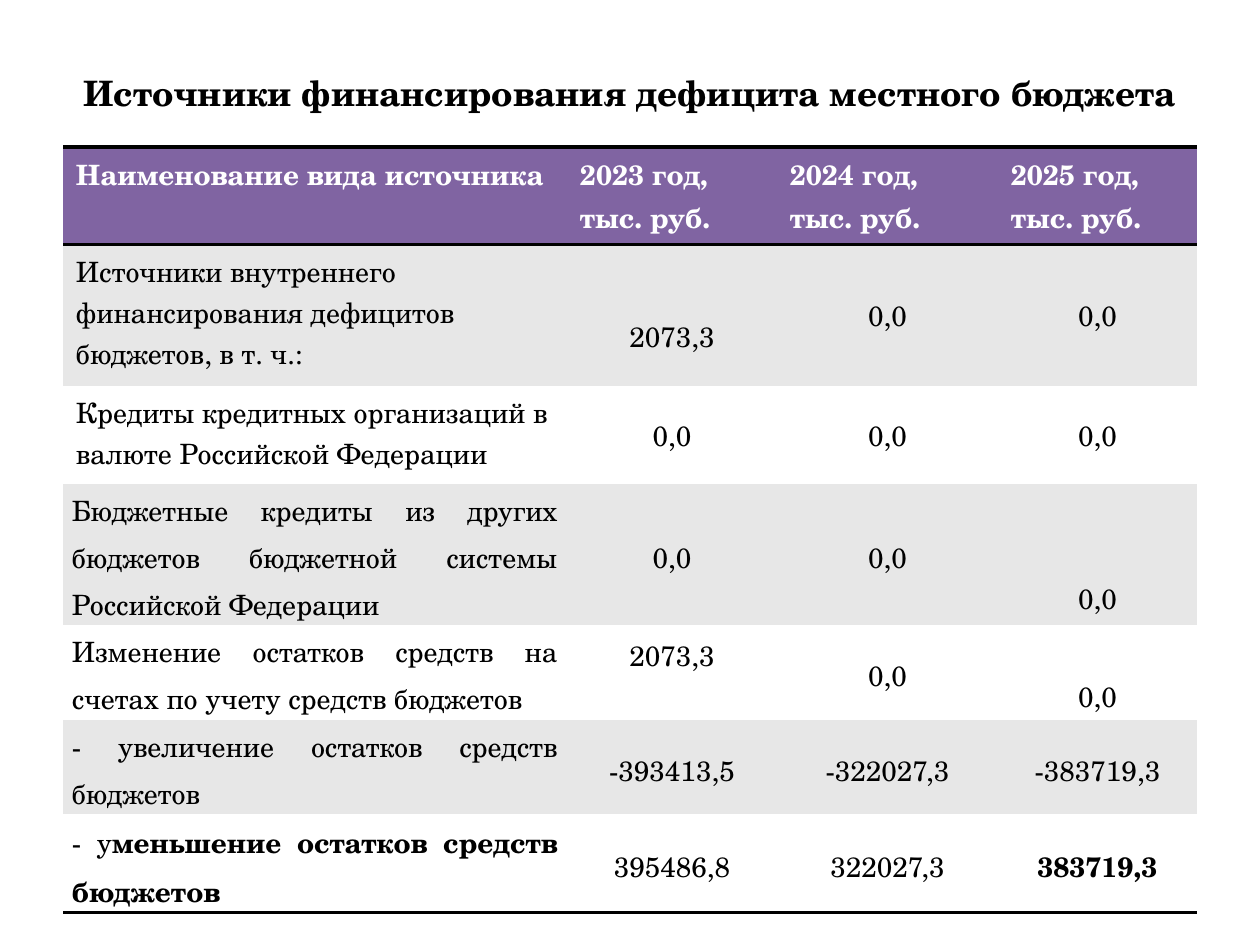
import pptx
import pptx.util
import pptx.dml.color
import pptx.enum.text
import pptx.oxml
import pptx.oxml.ns

RGB = pptx.dml.color.RGBColor
ALIGN = pptx.enum.text.PP_ALIGN
ANCHOR = pptx.enum.text.MSO_ANCHOR

BLACK = RGB(0x00, 0x00, 0x00)
WHITE = RGB(0xFF, 0xFF, 0xFF)
PURPLE = RGB(0x80, 0x64, 0xA2)
GREY = RGB(0xE7, 0xE7, 0xE7)
FONT = "TeX Gyre Schola"
EMU_PER_PX = 914400 / 126
BLANK_LINE = 41

COLUMNS = [504, 210, 221, 199]
ROWS = [98, 141, 98, 141, 95, 94, 99]
HEADER = ["Наименование вида источника", "2023 год, тыс. руб.",
          "2024 год, тыс. руб.", "2025 год, тыс. руб."]
SOURCES = [
    ["Источники внутреннего финансирования дефицитов бюджетов, в т. ч.:", "2073,3", "0,0", "0,0"],
    ["Кредиты кредитных организаций в валюте Российской Федерации", "0,0", "0,0", "0,0"],
    ["Бюджетные кредиты из других бюджетов бюджетной системы Российской Федерации",
     "0,0", "0,0", "0,0"],
    ["Изменение остатков средств на счетах по учету средств бюджетов", "2073,3", "0,0", "0,0"],
    ["- увеличение остатков средств бюджетов", "-393413,5", "-322027,3", "-383719,3"],
    ["- у|меньшение остатков средств бюджетов", "395486,8", "322027,3", "|383719,3"],
]
# Blank lines (above, below) that push a value off the middle of its cell
SHIFTS = {(1, 1): (1, 0), (3, 3): (2, 0), (4, 1): (0, 1), (4, 3): (1, 0)}
FIRST_SPACED_ROW = 3


def px(n):
    return pptx.util.Emu(round(n * EMU_PER_PX))


def add_run(p, text, size, color, bold):
    r = p.add_run()
    r.text = text
    r.font.name = FONT
    r.font.size = pptx.util.Pt(size)
    r.font.bold = bold
    r.font.color.rgb = color


def add_title(slide, text):
    tf = slide.shapes.add_textbox(px(63), px(38), px(1134), px(109)).text_frame
    tf.word_wrap = True
    tf.vertical_anchor = ANCHOR.MIDDLE
    p = tf.paragraphs[0]
    p.alignment = ALIGN.CENTER
    add_run(p, text, 20, BLACK, True)


def set_borders(cell, ruled):
    """Rule the sides named in ruled (T, B) in black and clear the others."""
    tc_pr = cell._tc.get_or_add_tcPr()
    for i, side in enumerate("LRTB"):
        fill = f'<a:solidFill><a:srgbClr val="{BLACK}"/></a:solidFill>' if side in ruled else "<a:noFill/>"
        tc_pr.insert(i, pptx.oxml.parse_xml(
            f'<a:ln{side} {pptx.oxml.ns.nsdecls("a")} w="{pptx.util.Pt(2)}">{fill}</a:ln{side}>'))


def set_margins(cell, side, top, bottom):
    cell.margin_left = cell.margin_right = px(side)
    cell.margin_top, cell.margin_bottom = px(top), px(bottom)


def fill_header_cell(cell, text):
    cell.fill.solid()
    cell.fill.fore_color.rgb = PURPLE
    set_margins(cell, 13, 6, 6)
    add_run(cell.text_frame.paragraphs[0], text, 16, WHITE, True)
    set_borders(cell, "TB")


def fill_body_cell(cell, text, row, col):
    """Text after a bar is bold."""
    cell.fill.solid()
    cell.fill.fore_color.rgb = GREY if row % 2 else WHITE
    spaced = row >= FIRST_SPACED_ROW
    above, below = SHIFTS.get((row, col), (0, 0))
    side, edge = (9, 0) if spaced else (13, 6)
    set_margins(cell, side, edge + above * BLANK_LINE, edge + below * BLANK_LINE)
    p = cell.text_frame.paragraphs[0]
    if spaced:
        p.line_spacing = 1.15
    if col:
        cell.vertical_anchor = ANCHOR.MIDDLE
        p.alignment = ALIGN.CENTER
    else:
        p.alignment = ALIGN.JUSTIFY if spaced else ALIGN.LEFT
    for i, part in enumerate(text.split("|")):
        if part:
            add_run(p, part, 16, BLACK, i == 1)
    set_borders(cell, {1: "T", len(SOURCES): "B"}.get(row, ""))


def add_sources_table(slide):
    table = slide.shapes.add_table(len(ROWS), len(COLUMNS), px(63), px(147),
                                   px(sum(COLUMNS)), px(sum(ROWS))).table
    table.first_row = table.horz_banding = False
    for column, width in zip(table.columns, COLUMNS):
        column.width = px(width)
    for row, height in zip(table.rows, ROWS):
        row.height = px(height)
    for col, text in enumerate(HEADER):
        fill_header_cell(table.cell(0, col), text)
    for row, texts in enumerate(SOURCES, 1):
        for col, text in enumerate(texts):
            fill_body_cell(table.cell(row, col), text, row, col)


def main():
    prs = pptx.Presentation()
    prs.slide_width, prs.slide_height = px(1260), px(945)
    slide = prs.slides.add_slide(prs.slide_layouts[6])
    add_title(slide, "Источники финансирования дефицита местного бюджета")
    add_sources_table(slide)
    prs.save("out.pptx")


if __name__ == "__main__":
    main()
